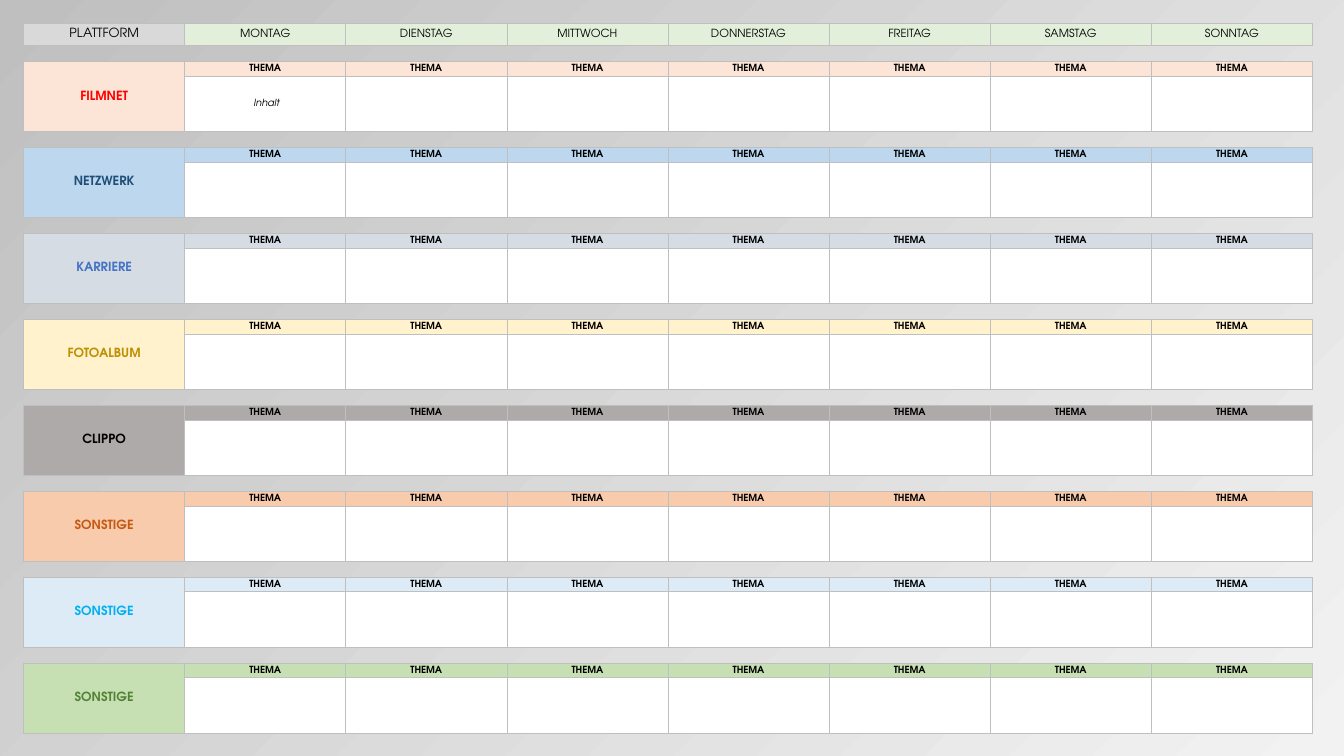
from lxml.etree import SubElement
from pptx import Presentation
from pptx.dml.color import RGBColor
from pptx.enum.text import MSO_ANCHOR as Anchor, PP_ALIGN as Align
from pptx.oxml.ns import qn
from pptx.util import Pt

FONT = "TeX Gyre Adventor"
DAYS = ["MONTAG", "DIENSTAG", "MITTWOCH", "DONNERSTAG", "FREITAG", "SAMSTAG", "SONNTAG"]
# Name, text colour, fill
PLATFORMS = [
    ("FILMNET", "FF0000", "FCE4D6"),
    ("NETZWERK", "1F4E78", "BDD7EE"),
    ("KARRIERE", "4472C4", "D6DCE4"),
    ("FOTOALBUM", "BF8F00", "FFF2CC"),
    ("CLIPPO", "000000", "AEAAAA"),
    ("SONSTIGE", "C65911", "F8CBAD"),
    ("SONSTIGE", "00B0F0", "DDEBF7"),
    ("SONSTIGE", "548235", "C6E0B4"),
]
COLUMNS = 1 + len(DAYS)
COLUMN_WIDTH = 115.1
HEADER_HEIGHT = 16
BLOCK_HEIGHTS = [11.4, 10.5, 39.5]  # gap, topic, content
HEIGHTS = [HEADER_HEIGHT] + BLOCK_HEIGHTS * len(PLATFORMS)


def rgb(value):
    return RGBColor.from_string(value)


def style_cell(cell, text="", fill=None, size=7, color="000000", bold=False, italic=False):
    # Borders: gap cells (no fill) keep only the horizontal lines
    properties = cell._tc.get_or_add_tcPr()
    for side in "LRTB":
        line = SubElement(properties, qn(f"a:ln{side}"), w=str(Pt(0.5)))
        if fill or side in "TB":
            solid = SubElement(line, qn("a:solidFill"))
            SubElement(solid, qn("a:srgbClr"), val="BFBFBF")
        else:
            SubElement(line, qn("a:noFill"))
    if fill:
        cell.fill.solid()
        cell.fill.fore_color.rgb = rgb(fill)
    else:
        cell.fill.background()

    cell.margin_left = cell.margin_right = cell.margin_top = cell.margin_bottom = 0
    cell.vertical_anchor = Anchor.MIDDLE
    para = cell.text_frame.paragraphs[0]
    para.alignment = Align.CENTER
    if text:
        span = para.add_run()
        span.text = text
        font = span.font
        font.name, font.size, font.bold, font.italic = FONT, Pt(size), bold, italic
        font.color.rgb = rgb(color)
    else:
        # Small empty line, so that the row keeps its height
        SubElement(para._p, qn("a:endParaRPr"), sz="700")


deck = Presentation()
deck.slide_width, deck.slide_height = Pt(960), Pt(540)
page = deck.slides.add_slide(deck.slide_layouts[6])

# Background gradient, light at the bottom right
backdrop = page.background.fill
backdrop.gradient()
backdrop.gradient_angle = 135
for stop, color in zip(backdrop.gradient_stops, ["F2F2F2", "BFBFBF"]):
    stop.color.rgb = rgb(color)
light = page.element.xpath(".//a:gs/a:srgbClr")[0]
SubElement(light, qn("a:alpha"), val="40000")

# Table grid
table = page.shapes.add_table(
    len(HEIGHTS), COLUMNS, Pt(16.8), Pt(16.6), Pt(COLUMN_WIDTH * COLUMNS), Pt(sum(HEIGHTS))
).table
table.first_row = table.horz_banding = False
for column in table.columns:
    column.width = Pt(COLUMN_WIDTH)
for row, height in zip(table.rows, HEIGHTS):
    row.height = Pt(height)

# Header row
style_cell(table.cell(0, 0), "PLATTFORM", "D9D9D9", 9)
for column, day in enumerate(DAYS, 1):
    style_cell(table.cell(0, column), day, "E2EFDA", 8)

# One block per platform: gap, topic row, content row
for index, (name, color, fill) in enumerate(PLATFORMS):
    gap = 1 + index * len(BLOCK_HEIGHTS)
    topic, content = gap + 1, gap + 2
    for column in range(COLUMNS):
        style_cell(table.cell(gap, column))
    style_cell(table.cell(topic, 0), name, fill, 9, color, bold=True)
    style_cell(table.cell(content, 0), fill=fill)
    table.cell(topic, 0).merge(table.cell(content, 0))
    for column in range(1, COLUMNS):
        style_cell(table.cell(topic, column), "THEMA", fill, bold=True)
        sample = "Inhalt" if (index, column) == (0, 1) else ""
        style_cell(table.cell(content, column), sample, "FFFFFF", italic=True)
table.cell(3, 1).margin_left = Pt(2)

deck.save("out.pptx")
